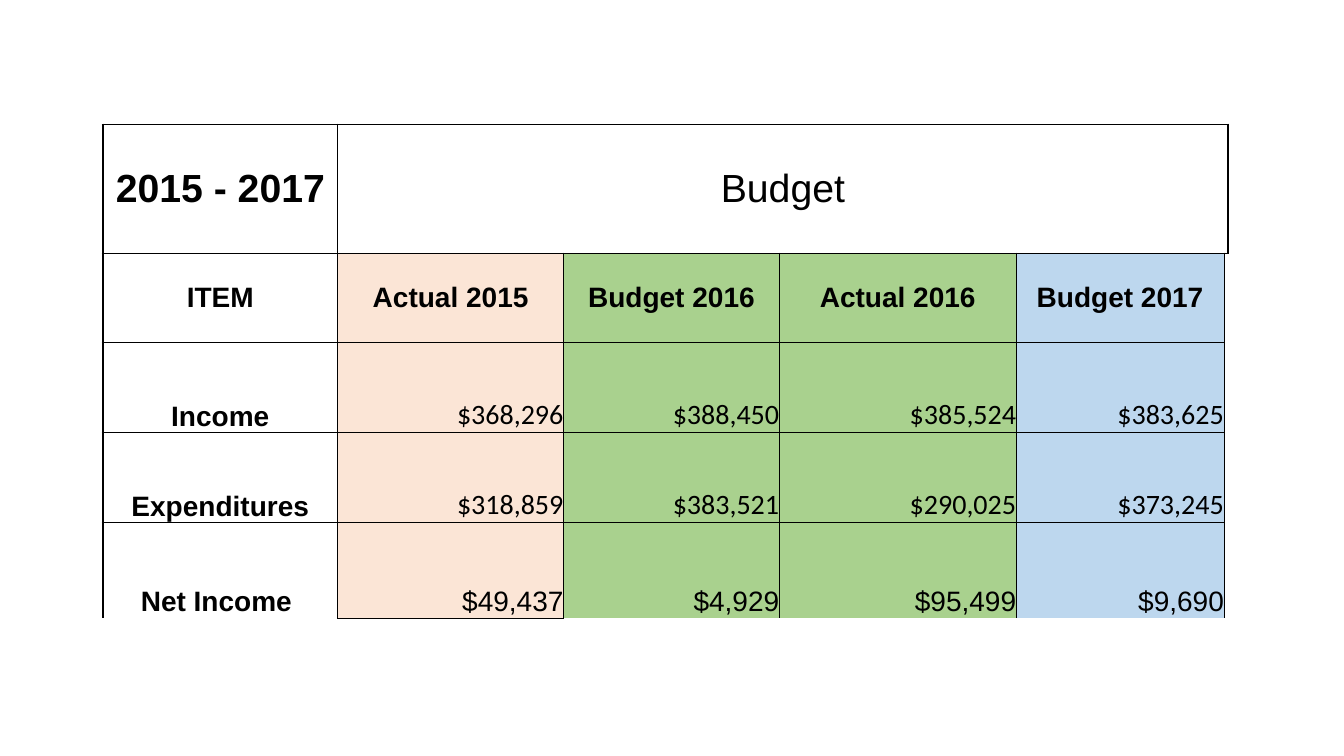
from lxml import etree
from pptx import Presentation
from pptx import util as u
from pptx.dml.color import RGBColor
from pptx.enum import text
from pptx.oxml.ns import qn

HEADS = ["ITEM", "Actual 2015", "Budget 2016", "Actual 2016", "Budget 2017"]
ROWS = [
    ["Income", "$368,296", "$388,450", "$385,524", "$383,625"],
    ["Expenditures", "$318,859", "$383,521", "$290,025", "$373,245"],
    ["Net Income ", "$49,437", "$4,929", "$95,499", "$9,690"],
]
FILLS = [None, "FBE5D6", "A9D18E", "A9D18E", "BDD7EE", None]
WIDTHS = [2.33, 2.24, 2.14, 2.35, 2.06, 0.03]
HEIGHTS = [1.28, 0.89, 0.89, 0.89, 0.95]
ALIGN = text.PP_ALIGN
ANCHOR = text.MSO_ANCHOR


def color(code):
    return RGBColor.from_string(code)


def border(cell, sides):
    props = cell._tc.get_or_add_tcPr()
    for side in "LRTB":
        width = sides.get(side, 0)
        line = etree.SubElement(props, qn("a:ln" + side), w=str(u.Pt(width)))
        if width:
            fill = etree.SubElement(line, qn("a:solidFill"))
            etree.SubElement(fill, qn("a:srgbClr"), val="000000")
        else:
            etree.SubElement(line, qn("a:noFill"))


def edges(row, col):
    sides = dict.fromkeys("LRTB", 0.5)
    if col == 0:
        sides["L"] = 2
    elif row == 0:
        sides["R"] = 2
    elif col == 5:
        sides = {"L": 0.5, "T": 0.5 if row == 1 else 0}
    if row == 4 and col != 1:
        sides["B"] = 0
    return sides


def paint(cell, code):
    if code:
        cell.fill.solid()
        cell.fill.fore_color.rgb = color(code)
    else:
        cell.fill.background()


def write(cell, words, size, bold, face, align, anchor):
    cell.text = words
    cell.vertical_anchor = anchor
    para = cell.text_frame.paragraphs[0]
    para.alignment = align
    font = para.font
    font.size, font.bold, font.name = u.Pt(size), bold, face
    font.color.rgb = color("000000")


def budget(slide, left, top, width, height):
    frame = slide.shapes.add_table(
        len(HEIGHTS), len(WIDTHS),
        u.Inches(left), u.Inches(top), u.Inches(width), u.Inches(height))
    table = frame.table
    table.first_row = table.horz_banding = False
    for col, size in zip(table.columns, WIDTHS):
        col.width = u.Inches(size * width / sum(WIDTHS))
    for row, size in zip(table.rows, HEIGHTS):
        row.height = u.Inches(size * height / sum(HEIGHTS))
    for i in range(len(HEIGHTS)):
        for j in range(len(WIDTHS)):
            cell = table.cell(i, j)
            cell.margin_left = cell.margin_right = 0
            cell.margin_top = cell.margin_bottom = 0
            border(cell, edges(i, j))
            paint(cell, FILLS[j] if i else None)
    table.cell(0, 1).merge(table.cell(0, 5))
    for j, words in enumerate(["2015 - 2017", "Budget"]):
        write(table.cell(0, j), words, 28, j == 0, "Arial",
              ALIGN.CENTER, ANCHOR.MIDDLE)
    for j, words in enumerate(HEADS):
        write(table.cell(1, j), words, 20, True, "Arial",
              ALIGN.CENTER, ANCHOR.MIDDLE)
    for i, row in enumerate(ROWS, 2):
        for j, words in enumerate(row):
            face = "Calibri" if j and i < 4 else "Arial"
            align = ALIGN.RIGHT if j else ALIGN.CENTER
            write(table.cell(i, j), words, 20, j == 0, face,
                  align, ANCHOR.BOTTOM)


def main():
    deck = Presentation()
    deck.slide_width, deck.slide_height = u.Inches(13.33), u.Inches(7.5)
    slide = deck.slides.add_slide(deck.slide_layouts[6])
    budget(slide, 1.02, 1.23, 11.15, 4.9)
    deck.save("out.pptx")


if __name__ == "__main__":
    main()
